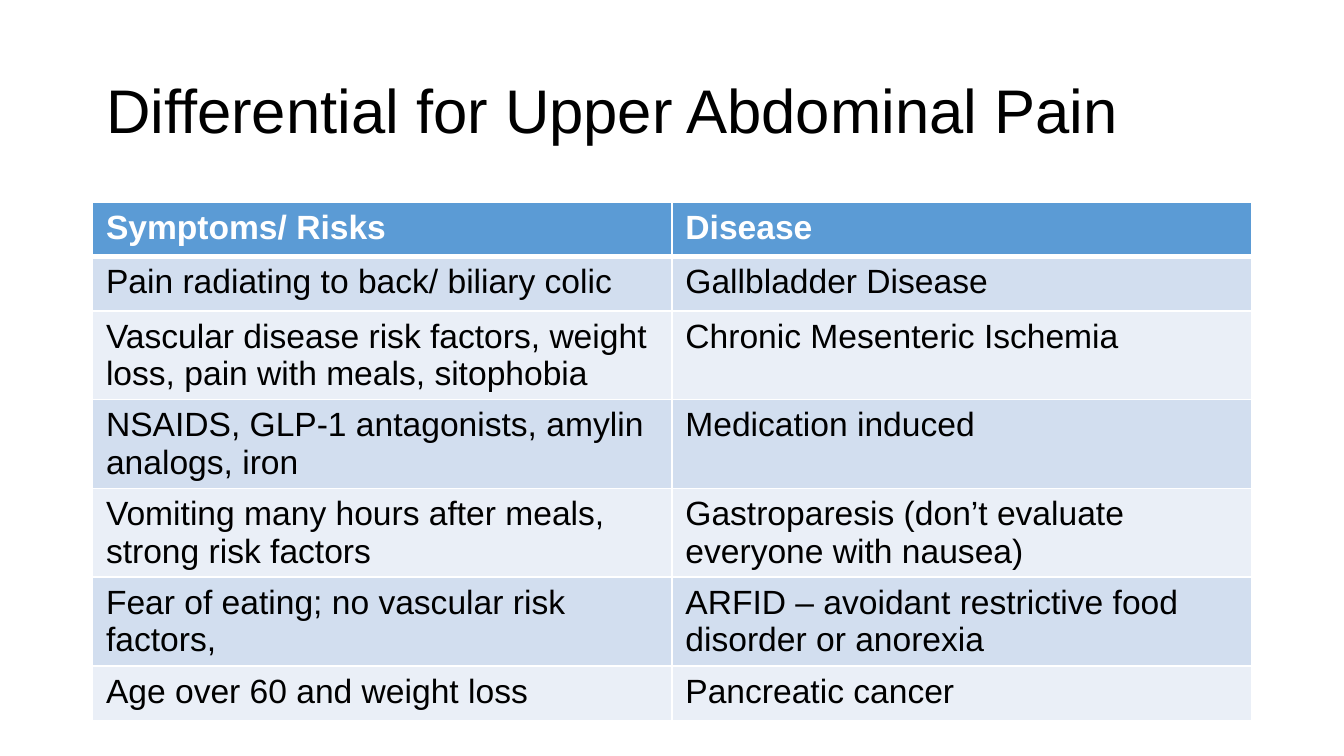
import pptx
import pptx.util
import pptx.dml.color
import pptx.enum.text
import pptx.oxml.ns
import lxml.etree

Pt = pptx.util.Pt
RGB = pptx.dml.color.RGBColor.from_string
ANCHOR = pptx.enum.text.MSO_ANCHOR

THEME = {
    "font": "Arial",
    "title_size": 33,
    "table_size": 18,
    "text": "000000",
    "header_text": "FFFFFF",
    "header": "5B9BD5",
    "bands": ("D2DEEF", "EAEFF7"),
    "border": "FFFFFF",
}

ROWS = [
    ("Symptoms/ Risks", "Disease"),
    ("Pain radiating to back/ biliary colic", "Gallbladder Disease"),
    ("Vascular disease risk factors, weight loss, pain with meals, sitophobia",
     "Chronic Mesenteric Ischemia"),
    ("NSAIDS, GLP-1 antagonists, amylin analogs, iron", "Medication induced"),
    ("Vomiting many hours after meals, strong risk factors",
     "Gastroparesis (don’t evaluate everyone with nausea)"),
    ("Fear of eating; no vascular risk factors,",
     "ARFID – avoidant restrictive food disorder or anorexia"),
    ("Age over 60 and weight loss", "Pancreatic cancer"),
]

LEFT, WIDTH = 49.6, 620.8
ROW_HEIGHT = 29.2


def add_run(p, text, size, color, bold=False):
    r = p.add_run()
    r.text = text
    r.font.name = THEME["font"]
    r.font.size = Pt(size)
    r.font.bold = bold
    r.font.color.rgb = RGB(color)


def set_borders(cell, widths):
    """Draw the cell edges; they must come before the fill in the XML."""
    qn = pptx.oxml.ns.qn
    tcPr = cell._tc.get_or_add_tcPr()
    for i, (edge, width) in enumerate(widths.items()):
        ln = lxml.etree.Element(qn(f"a:{edge}"), w=str(Pt(width)))
        fill = lxml.etree.SubElement(ln, qn("a:solidFill"))
        lxml.etree.SubElement(fill, qn("a:srgbClr"), val=THEME["border"])
        tcPr.insert(i, ln)


prs = pptx.Presentation()
prs.slide_width, prs.slide_height = Pt(720), Pt(405)
s = prs.slides.add_slide(prs.slide_layouts[5])

# Title
title = s.shapes.title
title.left, title.top, title.width, title.height = Pt(LEFT), Pt(21.6), Pt(WIDTH), Pt(78.3)
tf = title.text_frame
tf.vertical_anchor = ANCHOR.MIDDLE
tf.word_wrap = True
p = tf.paragraphs[0]
p.alignment = pptx.enum.text.PP_ALIGN.LEFT
p.line_spacing = 0.9
add_run(p, "Differential for Upper Abdominal Pain", THEME["title_size"], THEME["text"])

# Table
frame = s.shapes.add_table(len(ROWS), 2, Pt(LEFT), Pt(108.2), Pt(WIDTH),
                           Pt(ROW_HEIGHT * len(ROWS)))
table = frame.table
for col in table.columns:
    col.width = Pt(WIDTH / 2)

for i, texts in enumerate(ROWS):
    table.rows[i].height = Pt(ROW_HEIGHT)
    header = i == 0
    fill = THEME["header"] if header else THEME["bands"][(i - 1) % 2]
    color = THEME["header_text"] if header else THEME["text"]
    for j, text in enumerate(texts):
        cell = table.cell(i, j)
        cell.fill.solid()
        cell.fill.fore_color.rgb = RGB(fill)
        # A heavier rule separates the header from the body
        set_borders(cell, {"lnL": 1, "lnR": 1, "lnT": 3 if i == 1 else 1,
                           "lnB": 3 if header else 1})
        add_run(cell.text_frame.paragraphs[0], text, THEME["table_size"], color, header)

prs.save("out.pptx")
